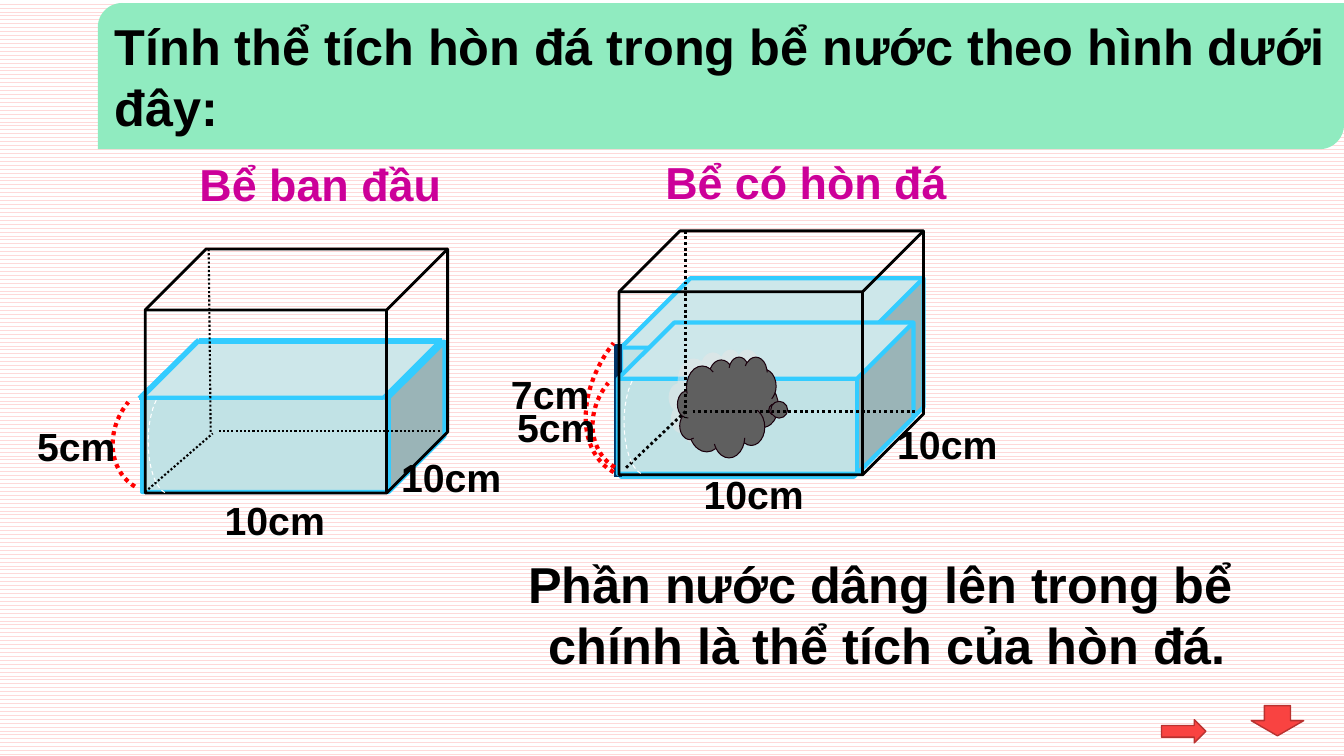
import pptx
import pptx.util
import pptx.dml.color
import pptx.enum.dml
import pptx.enum.shapes
import pptx.enum.text
import pptx.oxml
import pptx.oxml.ns
from dataclasses import dataclass

Inches = pptx.util.Inches
SHAPE = pptx.enum.shapes.MSO_SHAPE
DASH = pptx.enum.dml.MSO_LINE
ALIGN = pptx.enum.text.PP_ALIGN
ANCHOR = pptx.enum.text.MSO_ANCHOR


@dataclass
class Theme:
    font: str = "Arial"
    ink: str = "000000"
    heading: str = "CC0099"
    banner: str = "90EBC0"
    water: str = "C1E2E5"
    water_edge: str = "33CCFF"
    rise: str = "003366"
    stone: str = "5F5F5F"
    stone_edge: str = "1A000D"
    stone_shadow: str = "E7E6E6"
    measure: str = "FF0000"
    glint: str = "FFFFFF"
    arrow: str = "F94341"
    arrow_edge: str = "B83230"
    stripe: str = "FED9D9"
    paper: str = "FFFFFF"
    title_size: int = 36
    heading_size: int = 32
    label_size: int = 28


theme = Theme()

title = ("Tính thể tích hòn đá trong bể nước theo hình dưới đây:", (0.97, 0.03, 12.36, 1.45))
answer = (["Phần nước dâng lên trong bể ", "chính là thể tích của hòn đá."], (3.34, 5.44, 10.93, 1.31))
headings = [
    ("Bể có hòn đá", (6.5, 1.49, 3.01, 0.64)),
    ("Bể ban đầu", (1.88, 1.51, 2.62, 0.64)),
]
measurements = [
    ("7cm", (4.97, 3.62, 1.24, 0.57)),
    ("5cm", (5.03, 3.95, 1.36, 0.57)),
    ("5cm", (0.27, 4.14, 1.16, 0.57)),
    ("10cm", (6.88, 4.62, 1.25, 0.57)),
    ("10cm", (2.13, 4.87, 1.25, 0.57)),
    ("10cm", (3.88, 4.45, 1.25, 0.57)),
    ("10cm", (8.8, 4.12, 1.25, 0.57)),
]
water_before = ((1.41, 3.39, 3, 1.49), 0.372)
water_risen = ((6.16, 2.76, 3, 1.97), 0.35)
water_level = ((6.13, 3.2, 2.93, 1.5), 0.372)
rise_mark = ((6.13, 3.41), (6.13, 4.73))
stone = (6.72, 3.54, 1, 1)
surface = [(1.38, 3.95), (3.8, 3.95), (4.38, 3.37), (1.97, 3.37)]
glint_curves = [
    [(1.55, 3.97), (1.5, 4.07), (1.47, 4.22), (1.47, 4.38)],
    [(1.47, 4.38), (1.47, 4.63), (1.54, 4.84), (1.64, 4.89)],
]
glint_offsets = [(0, 0), (4.72, -0.19)]
tanks = [
    ((6.14, 2.29, 3.02, 2.42), 2, [
        ((6.8, 2.29), (6.8, 4.15)), ((6.21, 4.64), (6.8, 4.08)), ((6.87, 4.08), (9.08, 4.08))]),
    ((1.44, 2.47, 3, 2.42), 1.5, [
        ((2.07, 2.47), (2.09, 4.3)), ((1.44, 4.88), (2.11, 4.3)), ((2.17, 4.28), (4.37, 4.28))]),
]
height_arcs = [(5.92, 2.87, 1.39, 1.97), (1.15, 3.72, 1.02, 1.2), (5.91, 3.53, 1.02, 1.2)]
arrows = [
    (SHAPE.RIGHT_ARROW, (11.52, 7.14, 0.44, 0.23)),
    (SHAPE.DOWN_ARROW, (12.41, 7, 0.52, 0.3)),
]

deck = pptx.Presentation()
deck.slide_width, deck.slide_height = Inches(13.33), Inches(7.5)
slide = deck.slides.add_slide(deck.slide_layouts[6])
shapes = slide.shapes


def rgb(color):
    return pptx.dml.color.RGBColor.from_string(color)


def style(shape, fill=None, line=None, width=1, dash=None):
    shape.shadow.inherit = False
    if fill:
        shape.fill.solid()
        shape.fill.fore_color.rgb = rgb(fill)
    else:
        shape.fill.background()
    outline(shape.line, line, width, dash)


def outline(line, color, width, dash=None):
    if not color:
        line.fill.background()
        return
    line.color.rgb = rgb(color)
    line.width = pptx.util.Pt(width)
    if dash:
        line.dash_style = dash


def add_preset(preset, box, adjustments=(), **look):
    shape = shapes.add_shape(preset, *map(Inches, box))
    for index, value in enumerate(adjustments):
        shape.adjustments[index] = value
    style(shape, **look)
    return shape


def add_line(start, end, color, width, dash=None):
    edge = shapes.add_connector(pptx.enum.shapes.MSO_CONNECTOR.STRAIGHT, *map(Inches, start + end))
    outline(edge.line, color, width, dash)
    pptx.oxml.ns.qn("a:effectLst")
    edge._element.spPr.append(pptx.oxml.parse_xml(
        '<a:effectLst xmlns:a="http://schemas.openxmlformats.org/drawingml/2006/main"/>'))


def write(shape, lines, size, color=theme.ink, align=ALIGN.LEFT, wrap=True):
    frame = shape.text_frame
    frame.word_wrap = wrap
    for index, words in enumerate(lines):
        paragraph = frame.paragraphs[0] if index == 0 else frame.add_paragraph()
        paragraph.text = words
        paragraph.alignment = align
        paragraph.font.name = theme.font
        paragraph.font.size = pptx.util.Pt(size)
        paragraph.font.bold = True
        paragraph.font.color.rgb = rgb(color)


def add_text(box, *args, **options):
    write(shapes.add_textbox(*map(Inches, box)), *args, **options)


def curve_point(curve, t):
    weights = ((1 - t) ** 3, 3 * t * (1 - t) ** 2, 3 * t * t * (1 - t), t ** 3)
    return tuple(sum(w * p[axis] for w, p in zip(weights, curve)) for axis in (0, 1))


def add_glint(dx, dy):
    points = [(Inches(x + dx), Inches(y + dy)) for curve in glint_curves
              for x, y in (curve_point(curve, step / 8) for step in range(9))]
    builder = shapes.build_freeform(*points[0])
    builder.add_line_segments(points[1:], close=False)
    style(builder.convert_to_shape(), line=theme.glint, width=0.75, dash=DASH.DASH)


def add_water(box, depth):
    add_preset(SHAPE.CUBE, box, [depth], fill=theme.water, line=theme.water_edge, width=3)


backdrop = slide.background.fill
backdrop.patterned()
backdrop.pattern = pptx.enum.dml.MSO_PATTERN.WAVE
backdrop.fore_color.rgb = rgb(theme.stripe)
backdrop.back_color.rgb = rgb(theme.paper)

add_water(*water_before)
add_water(*water_risen)
add_line(*rise_mark, theme.rise, 6)
add_water(*water_level)

boulder = add_preset(SHAPE.CLOUD_CALLOUT, stone, [0.471, 0.023],
                     fill=theme.stone, line=theme.stone_edge, width=0.75)
boulder._element.spPr.find(pptx.oxml.ns.qn("a:effectLst")).append(pptx.oxml.parse_xml(
    '<a:outerShdw xmlns:a="http://schemas.openxmlformats.org/drawingml/2006/main" '
    f'dist="{pptx.util.Pt(7.8)}" dir="{220 * 60000}"><a:srgbClr val="{theme.stone_shadow}">'
    '<a:alpha val="50000"/></a:srgbClr></a:outerShdw>'))

for corner, following in zip(surface, surface[1:] + surface[:1]):
    add_line(corner, following, theme.water_edge, 3)
for box in height_arcs:
    arc = add_preset(SHAPE.ARC, box, [160.02, 2.842], line=theme.measure, width=3, dash=DASH.ROUND_DOT)
    arc.rotation = 215.8
for box, hidden_width, hidden_edges in tanks:
    for start, end in hidden_edges:
        add_line(start, end, theme.ink, hidden_width, DASH.ROUND_DOT)
    add_preset(SHAPE.CUBE, box, [0.25], line=theme.ink, width=2)
for offset in glint_offsets:
    add_glint(*offset)

for words, box in measurements:
    add_text(box, [words], theme.label_size)
banner = add_preset(SHAPE.ROUND_2_DIAG_RECTANGLE, title[1], fill=theme.banner)
banner.text_frame.vertical_anchor = ANCHOR.MIDDLE
write(banner, [title[0]], theme.title_size)
add_text(answer[1], answer[0], theme.title_size, align=ALIGN.CENTER)
for words, box in headings:
    add_text(box, [words], theme.heading_size, color=theme.heading, wrap=False)
for preset, box in arrows:
    add_preset(preset, box, fill=theme.arrow, line=theme.arrow_edge)

deck.save("out.pptx")
